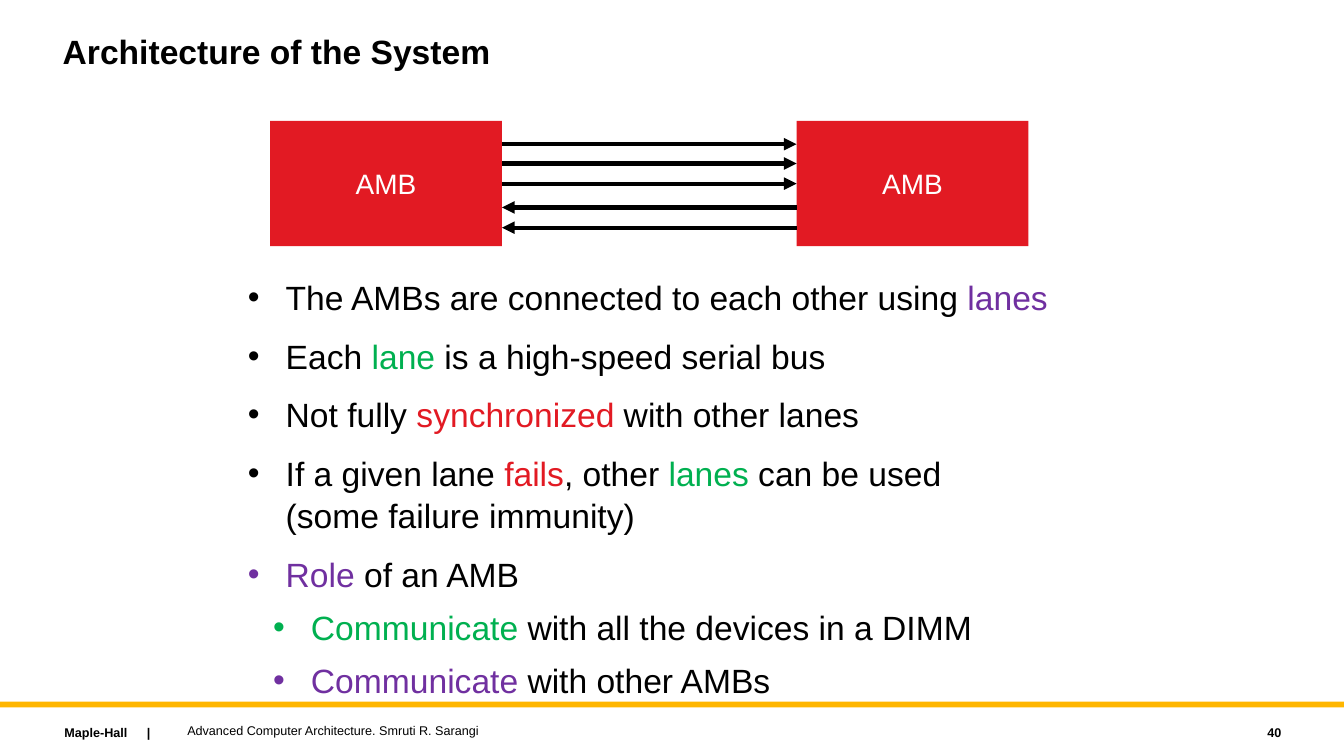
"""Build the slide on the architecture of a system with two AMBs."""
from lxml.etree import SubElement
from pptx import Presentation
from pptx.dml.color import RGBColor
from pptx.enum.shapes import MSO_CONNECTOR, MSO_SHAPE
from pptx.enum.text import MSO_ANCHOR, PP_ALIGN
from pptx.oxml.ns import qn
from pptx.util import Pt

COLORS = {"black": "000000", "white": "FFFFFF", "red": "E21A23",
          "green": "00B050", "purple": "7030A0", "gold": "FFB600"}


def style(para, size, color="black", bold=False, align=PP_ALIGN.LEFT):
    para.alignment = align
    font = para.font
    font.name, font.size, font.bold = "Arial", Pt(size), bold
    font.color.rgb = RGBColor.from_string(COLORS[color])


def block(left, top, width, height, color):
    shape = slide.shapes.add_shape(
        MSO_SHAPE.RECTANGLE, Pt(left), Pt(top), Pt(width), Pt(height))
    shape.shadow.inherit = False
    shape.fill.solid()
    shape.fill.fore_color.rgb = RGBColor.from_string(COLORS[color])
    shape.line.fill.background()
    return shape


deck = Presentation()
deck.slide_width, deck.slide_height = Pt(960), Pt(540)
slide = deck.slides.add_slide(deck.slide_layouts[5])

block(0, 501.2, 960, 4.2, "gold")

title = slide.shapes.title
title.left, title.top, title.width, title.height = Pt(37.6), Pt(21.6), Pt(720), Pt(64.8)
title.text_frame.text = "Architecture of the System"
title.text_frame.vertical_anchor = MSO_ANCHOR.TOP
title.text_frame.paragraphs[0].line_spacing = 0.9
style(title.text_frame.paragraphs[0], 24, bold=True)

points = [
    (0, [("The AMBs are connected to each other using ", "black"), ("lanes", "purple")]),
    (0, [("Each ", "black"), ("lane", "green"), (" is a high-speed serial bus", "black")]),
    (0, [("Not fully ", "black"), ("synchronized", "red"), (" with other lanes", "black")]),
    (0, [("If a given lane ", "black"), ("fails", "red"), (", other ", "black"),
         ("lanes", "green"), (" can be used", "black"), ("\n", "black"),
         ("(some failure immunity)", "black")]),
    (0, [("Role", "purple"), (" of an AMB", "black")]),
    (1, [("Communicate", "green"), (" with all the devices in a DIMM", "black")]),
    (1, [("Communicate", "purple"), (" with other AMBs", "black")]),
]
body = slide.shapes.add_textbox(Pt(170), Pt(193), Pt(620.6), Pt(305.2)).text_frame
body.word_wrap = True
for index, (level, parts) in enumerate(points):
    para = body.add_paragraph() if index else body.paragraphs[0]
    para.level = level
    props = para._p.get_or_add_pPr()
    props.set("marL", str(Pt(27 + 18 * level)))
    props.set("indent", str(Pt(-27)))
    SubElement(props, qn("a:buFont"), typeface="Arial")
    SubElement(props, qn("a:buChar"), char="•")
    para.line_spacing = 1.04
    para.space_before = Pt((8 if level else 12) if index else 0)
    style(para, 24)
    for words, color in parts:
        if words == "\n":
            para.add_line_break()
            continue
        run = para.add_run()
        run.text = words
        if color != "black":
            run.font.color.rgb = RGBColor.from_string(COLORS[color])

footers = [
    (38.9, 514, 85, "Maple-Hall\t|", True, PP_ALIGN.LEFT),
    (126.7, 512.6, 576, "Advanced Computer Architecture. Smruti R. Sarangi", False, PP_ALIGN.LEFT),
    (821.6, 514, 100.8, "40", True, PP_ALIGN.RIGHT),
]
for left, top, width, words, bold, align in footers:
    frame = slide.shapes.add_textbox(Pt(left), Pt(top), Pt(width), Pt(18)).text_frame
    frame.word_wrap = True
    frame.vertical_anchor = MSO_ANCHOR.MIDDLE
    frame.text = words
    para = frame.paragraphs[0]
    if "\t" in words:
        tabs = SubElement(para._p.get_or_add_pPr(), qn("a:tabLst"))
        SubElement(tabs, qn("a:tab"), pos=str(Pt(59)), algn="l")
    style(para, 9, bold=bold, align=align)

for left in (193, 569):
    frame = block(left, 86.4, 165.6, 89.4, "red").text_frame
    frame.vertical_anchor = MSO_ANCHOR.MIDDLE
    frame.text = "AMB"
    style(frame.paragraphs[0], 20, "white", align=PP_ALIGN.CENTER)

start, end = 358.6, 569
lanes = [(start, end, 103), (start, end, 116.8), (start, end, 131.2),
         (end, start, 148.2), (end, start, 162.6)]
for tail, head, top in lanes:
    lane = slide.shapes.add_connector(
        MSO_CONNECTOR.STRAIGHT, Pt(tail), Pt(top), Pt(head), Pt(top))
    lane.line.width = Pt(3)
    lane.line.color.rgb = RGBColor.from_string(COLORS["black"])
    SubElement(lane.line._get_or_add_ln(), qn("a:tailEnd"), type="triangle")
    SubElement(lane._element.spPr, qn("a:effectLst"))

deck.save("out.pptx")
